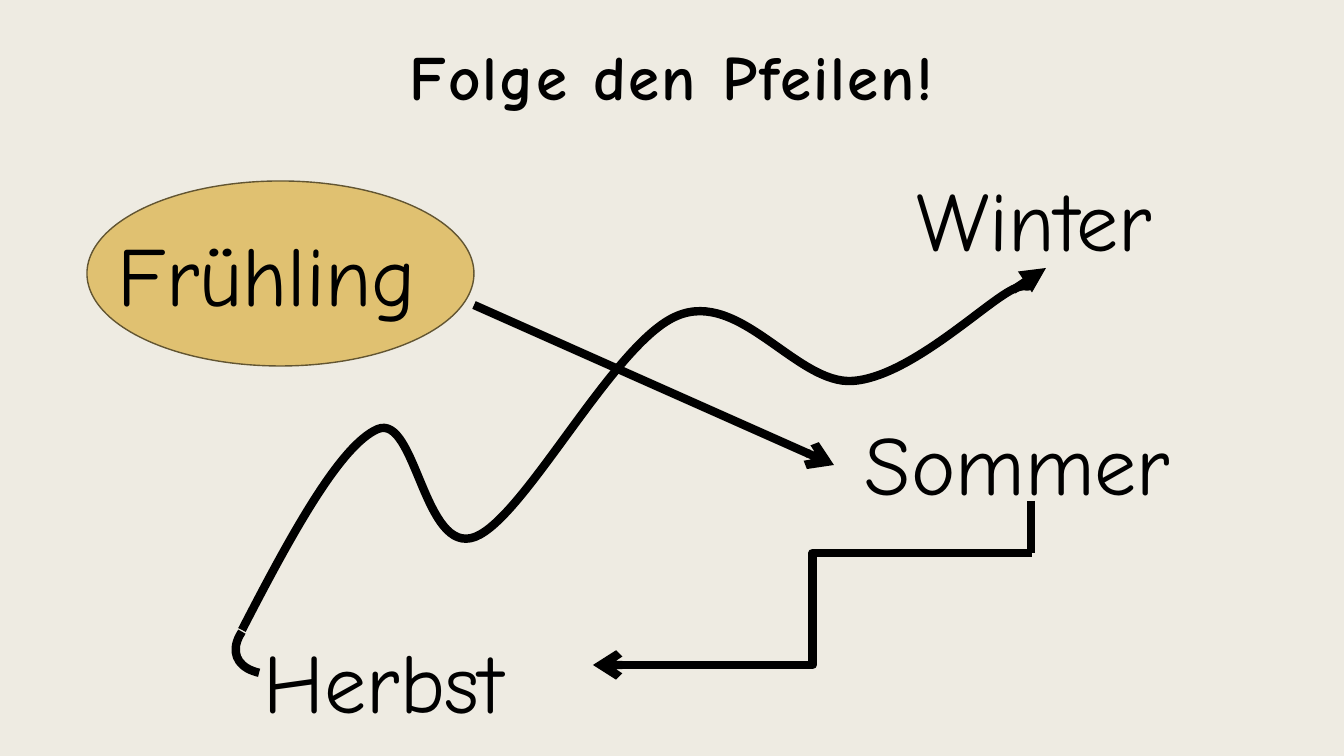
from dataclasses import dataclass
from itertools import chain

from lxml.etree import SubElement
from pptx import Presentation
from pptx.dml.color import RGBColor
from pptx.enum.shapes import MSO_CONNECTOR, MSO_SHAPE
from pptx.enum.text import MSO_ANCHOR, PP_ALIGN
from pptx.oxml.ns import qn
from pptx.util import Emu, Pt

TITLE = "Folge den Pfeilen!"
TITLE_BOX = (67, 30, 1210, 93)
SEASONS = {
    "Frühling": (108, 218),
    "Herbst": (254, 625),
    "Sommer": (855, 407),
    "Winter": (907, 163),
}
SEASON_SIZE = (418, 142)
START_OVAL = (87, 181, 387, 185)

# kind, start, end, arrowhead
ARROWS = [
    (MSO_CONNECTOR.STRAIGHT, (474, 305), (834, 465), "arrow"),
    (MSO_CONNECTOR.ELBOW, (1032, 553), (593, 665), "arrow"),
    (MSO_CONNECTOR.STRAIGHT, (1031, 501), (1031, 553), None),
]
WAVE_START = (242, 630)
# two control points and an end point for each bend
WAVE_BENDS = [
    ((290, 537), (340, 445), (378, 429)),
    ((416, 414), (424, 556), (475, 537)),
    ((525, 518), (614, 342), (677, 316)),
    ((740, 289), (797, 385), (853, 381)),
    ((908, 377), (981, 307), (1010, 291)),
    ((1024, 283), (1027, 288), (1030, 286)),
]
WAVE_TIP = (MSO_CONNECTOR.STRAIGHT, (1013, 290), (1046, 268), "triangle")
HOOK_BOX = (232, 593, 146, 75)
HOOK_ANGLES = (203.22, 12.18)
HOOK_TURN = 158.7


@dataclass(frozen=True)
class Theme:
    background: RGBColor = RGBColor(0xEE, 0xEB, 0xE2)
    oval: RGBColor = RGBColor(0xE0, 0xC1, 0x71)
    oval_edge: RGBColor = RGBColor(0x62, 0x55, 0x32)
    ink: RGBColor = RGBColor(0, 0, 0)
    font: str = "Comic Neue"
    title_size: int = 45
    season_size: int = 60
    stroke: int = 6


THEME = Theme()


def px(length):
    return Emu(round(length * 914400 / 100.8))


def box(values):
    return [px(value) for value in values]


def ink_line(line):
    line.color.rgb = THEME.ink
    line.width = Pt(THEME.stroke)


def add_words(slide, words, place, size):
    frame = slide.shapes.add_textbox(*box(place)).text_frame
    frame.word_wrap = True
    run = frame.paragraphs[0].add_run()
    run.text = words
    run.font.name = THEME.font
    run.font.size = Pt(size)
    run.font.color.rgb = THEME.ink
    return frame, run


def add_title(slide):
    frame, run = add_words(slide, TITLE, TITLE_BOX, THEME.title_size)
    frame.vertical_anchor = MSO_ANCHOR.BOTTOM
    frame.margin_bottom = px(10)
    frame.paragraphs[0].alignment = PP_ALIGN.CENTER
    frame.paragraphs[0].line_spacing = 1.3
    run.font.bold = True
    run.font._element.set("spc", "150")


def add_arrow(slide, kind, start, end, head):
    arrow = slide.shapes.add_connector(kind, *box(start + end))
    ink_line(arrow.line)
    if head:
        SubElement(arrow.line._get_or_add_ln(), qn("a:tailEnd"), type=head)
    SubElement(arrow._element.spPr, qn("a:effectLst"))


def bend_segments(outline):
    """Turn each three straight segments of the freeform into one cubic curve."""
    segments = list(outline._element.iter(qn("a:lnTo")))
    track = segments[0].getparent()
    for first in range(0, len(segments), 3):
        curve = SubElement(track, qn("a:cubicBezTo"))
        for segment in segments[first:first + 3]:
            curve.append(segment[0])
            track.remove(segment)


def ink_outline(outline):
    outline.fill.background()
    outline.shadow.inherit = False
    ink_line(outline.line)


def add_wave(slide):
    builder = slide.shapes.build_freeform(*box(WAVE_START))
    points = [box(point) for point in chain(*WAVE_BENDS)]
    builder.add_line_segments(points, close=False)
    wave = builder.convert_to_shape()
    bend_segments(wave)
    ink_outline(wave)


def add_hook(slide):
    hook = slide.shapes.add_shape(MSO_SHAPE.ARC, *box(HOOK_BOX))
    hook.rotation = HOOK_TURN
    for index, angle in enumerate(HOOK_ANGLES):
        hook.adjustments[index] = angle
    ink_outline(hook)


def add_start_oval(slide):
    oval = slide.shapes.add_shape(MSO_SHAPE.OVAL, *box(START_OVAL))
    oval.shadow.inherit = False
    oval.fill.solid()
    oval.fill.fore_color.rgb = THEME.oval
    oval.line.color.rgb = THEME.oval_edge
    oval.line.width = Pt(1)


def main():
    deck = Presentation()
    deck.slide_width, deck.slide_height = px(1344), px(756)
    slide = deck.slides.add_slide(deck.slide_layouts[6])
    slide.background.fill.solid()
    slide.background.fill.fore_color.rgb = THEME.background

    add_start_oval(slide)
    add_title(slide)
    for season, corner in SEASONS.items():
        add_words(slide, season, corner + SEASON_SIZE, THEME.season_size)
    for arrow in ARROWS:
        add_arrow(slide, *arrow)
    add_wave(slide)
    add_arrow(slide, *WAVE_TIP)
    add_hook(slide)
    deck.save("out.pptx")


if __name__ == "__main__":
    main()
